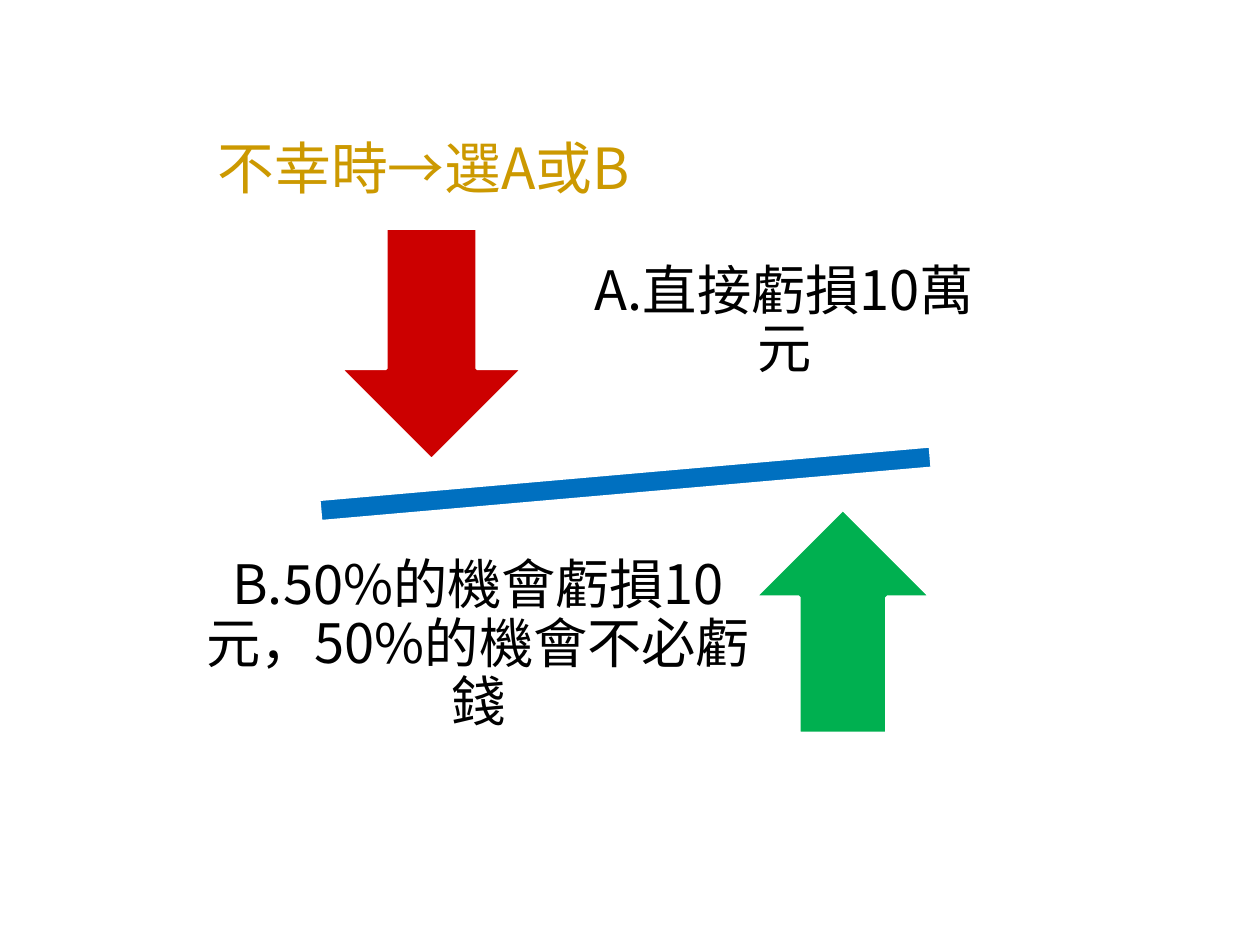
from pptx import Presentation
from pptx.dml.color import RGBColor
from pptx.enum.shapes import MSO_SHAPE as Shape
from pptx.enum.text import MSO_ANCHOR as Anchor, PP_ALIGN as Align
from pptx.oxml.ns import qn
from pptx.util import Inches, Pt
from lxml.etree import SubElement

FONT = "Noto Sans CJK SC"
OPTION_FORMAT = {"alignment": Align.CENTER, "line_spacing": 0.9}


def color(hex_value):
    return RGBColor.from_string(hex_value)


def add_symbol(slide, kind, box, fill, rotation=0):
    symbol = slide.shapes.add_shape(kind, *map(Inches, box))
    symbol.rotation = rotation
    symbol.shadow.inherit = False
    symbol.fill.solid()
    symbol.fill.fore_color.rgb = color(fill)
    symbol.line.color.rgb = color("FFFFFF")
    symbol.line.width = Pt(2)


def add_label(slide, text, box, size, text_color, insets, paragraph_format):
    frame = slide.shapes.add_textbox(*map(Inches, box)).text_frame
    margin_x, margin_y = map(Inches, insets)
    frame_format = {
        "word_wrap": True, "vertical_anchor": Anchor.MIDDLE,
        "margin_left": margin_x, "margin_right": margin_x,
        "margin_top": margin_y, "margin_bottom": margin_y,
    }
    for name, value in frame_format.items():
        setattr(frame, name, value)

    paragraph = frame.paragraphs[0]
    for name, value in paragraph_format.items():
        setattr(paragraph, name, value)
    run = paragraph.add_run()
    run.text = text
    run.font.size = Pt(size)
    run.font.color.rgb = color(text_color)
    run.font.name = FONT
    # Chinese characters take the East Asian font
    SubElement(run.font._element, qn("a:ea"), typeface=FONT)


def add_option(slide, text, box):
    add_label(slide, text, box, 31, "000000", (0.24, 0.24), OPTION_FORMAT)


def main():
    deck = Presentation()
    deck.slide_width, deck.slide_height = Inches(10), Inches(7.5)
    slide = deck.slides.add_slide(deck.slide_layouts[6])

    # Heading
    add_label(slide, "不幸時→選A或B", (1.63, 1.03, 6.26, 0.58), 32.4,
              "CC9900", (0.1, 0.05), {"alignment": Align.LEFT})

    # Tilted balance beam
    add_symbol(slide, Shape.MATH_MINUS, (1.65, 3.46, 6.63, 0.76), "0070C0", 355)

    # Option A above the beam
    add_symbol(slide, Shape.DOWN_ARROW, (2.7, 1.81, 1.45, 1.84), "CC0000")
    add_option(slide, "A.直接虧損10萬元", (4.42, 1.62, 3.61, 1.87))

    # Option B below the beam
    add_symbol(slide, Shape.UP_ARROW, (5.99, 4.04, 1.4, 1.78), "00B050")
    add_option(slide, "B.50%的機會虧損10元，50%的機會不必虧錢",
               (1.39, 4.19, 4.81, 1.87))

    deck.save("out.pptx")


if __name__ == "__main__":
    main()
